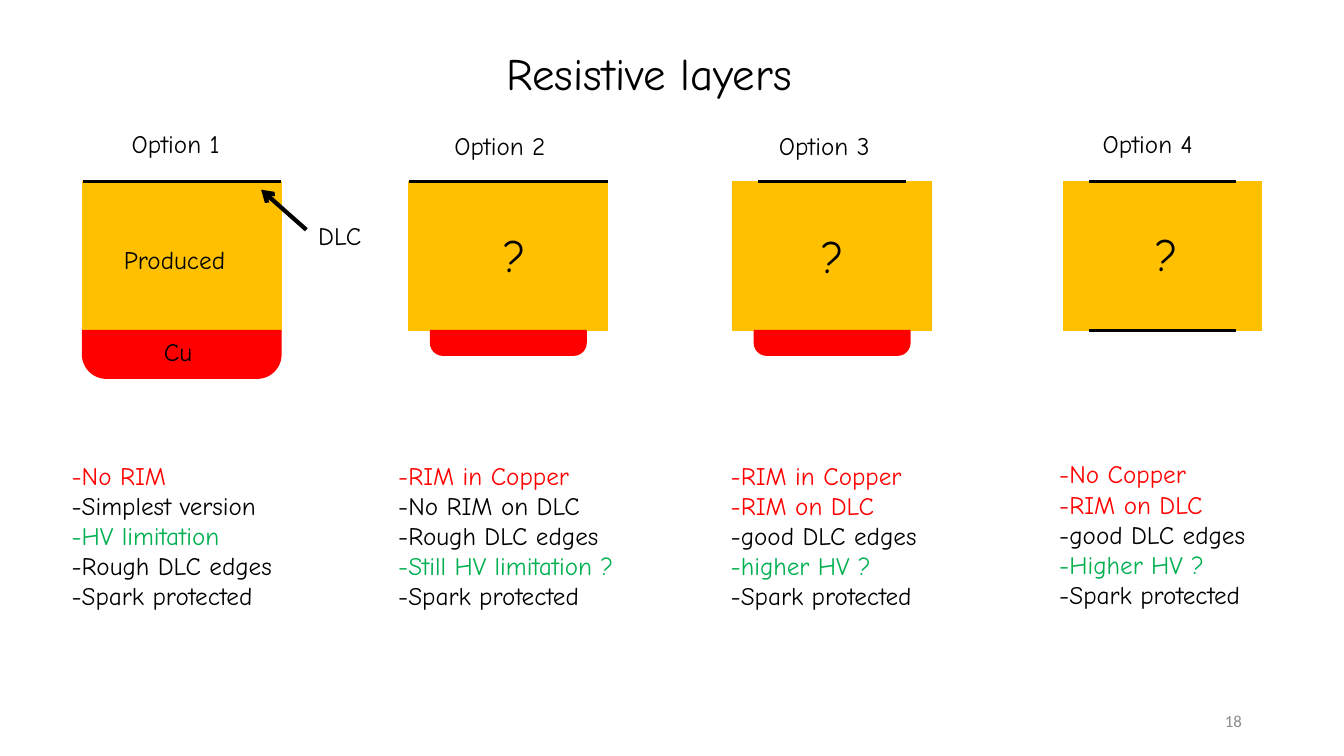
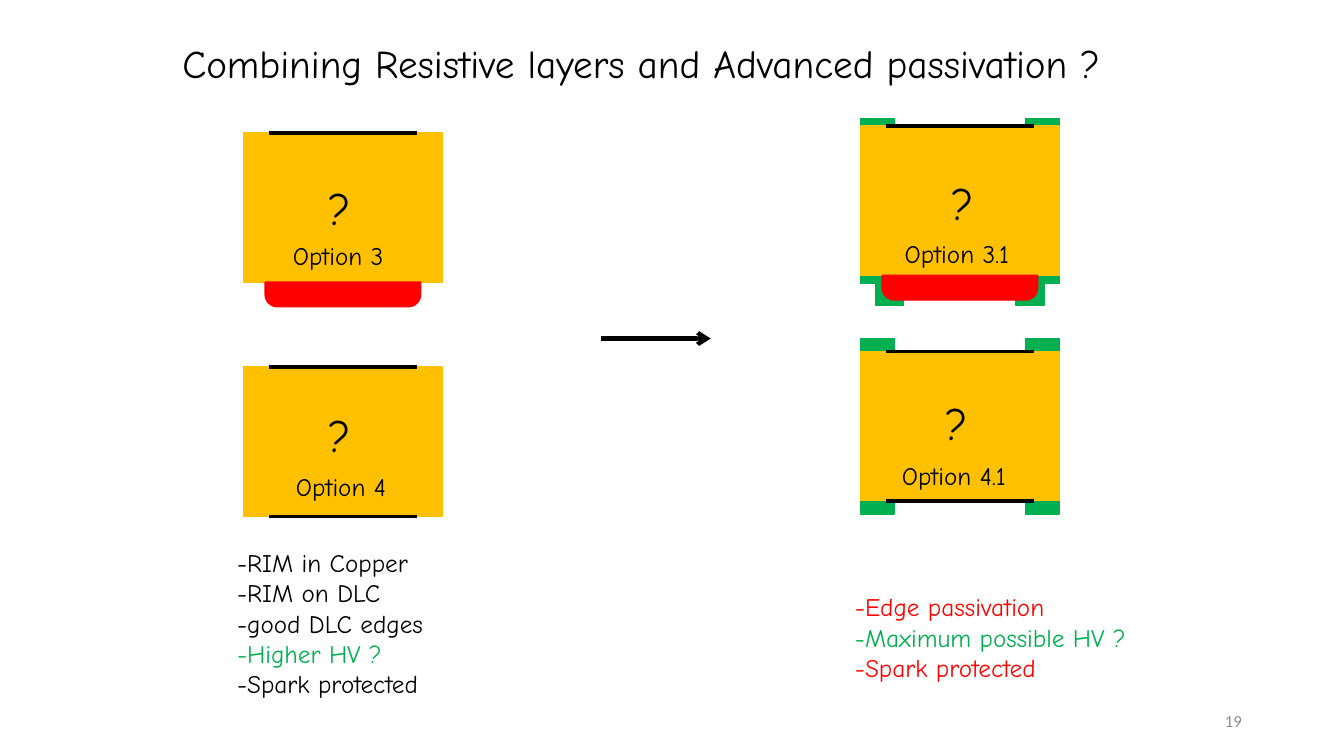
from dataclasses import dataclass

from lxml.etree import SubElement
from pptx import Presentation
from pptx.dml.color import RGBColor
from pptx.enum.shapes import MSO_CONNECTOR, MSO_SHAPE
from pptx.enum.text import MSO_ANCHOR, MSO_AUTO_SIZE, PP_ALIGN
from pptx.oxml.ns import qn
from pptx.util import Cm, Pt


@dataclass(frozen=True)
class Theme:
    black: str = "000000"
    red: str = "FF0000"
    green: str = "00B050"
    amber: str = "FFC000"
    grey: str = "8C8C8C"
    font: str = "Comic Neue"
    number_font: str = "Calibri"
    text_size: int = 18
    mark_size: int = 32
    number_size: int = 12
    layer_width: float = 2.5
    arrow_width: float = 3


THEME = Theme()
BLACK, RED, GREEN = THEME.black, THEME.red, THEME.green

# Geometry in centimetres
BLOCK_WIDTH, BLOCK_HEIGHT = 5.0, 3.76
LAYER_INSETS = {"full": 0, "short": 0.64}
COPPER_PADS = {"full": (0, 1.2), "rim": (0.54, 0.62)}  # inset, height
LEFT_PASSIVATION = {  # left-hand pieces: x, y, width, height
    "wrapped": [(0, -0.2, 0.84, 0.2), (0, 3.76, 0.56, 0.2),
                (0.38, 3.96, 0.18, 0.2), (0.38, 4.11, 0.7, 0.41)],
    "corners": [(0, -0.33, 0.84, 0.43), (0, 3.66, 0.84, 0.43)],
}

# Content: block labels are placed relative to their block
SLIDES = [
    {
        "number": "18", "layout": 4,
        "title": ("Resistive layers", 32, 12.5, 1.02, 8.9),
        "lists": [
            (1.55, 11.46, [("-No RIM", RED), ("-Simplest version", BLACK),
                           ("-HV limitation", GREEN), ("-Rough DLC edges", BLACK),
                           ("-Spark protected", BLACK)]),
            (9.78, 11.46, [("-RIM in Copper", RED), ("-No RIM on DLC", BLACK),
                           ("-Rough DLC edges", BLACK), ("-Still HV limitation ?", GREEN),
                           ("-Spark protected", BLACK)]),
            (18.16, 11.46, [("-RIM in Copper", RED), ("-RIM on DLC", RED),
                            ("-good DLC edges", BLACK), ("-higher HV ?", GREEN),
                            ("-Spark protected", BLACK)]),
            (26.44, 11.43, [("-No Copper", RED), ("-RIM on DLC", RED),
                            ("-good DLC edges", BLACK), ("-Higher HV ?", GREEN),
                            ("-Spark protected", BLACK)]),
        ],
        "blocks": [
            {"at": (2.08, 4.57), "top": "full", "copper": "full",
             "labels": [("Option 1", 0.99, -1.45), ("Produced", 0.79, 1.47),
                        ("Cu", 1.8, 3.78), ("DLC", 5.69, 0.86)]},
            {"at": (10.31, 4.57), "top": "full", "copper": "rim",
             "labels": [("Option 2", 0.89, -1.4), ("?", 2.13, 1.04)]},
            {"at": (18.47, 4.57), "top": "short", "copper": "rim",
             "labels": [("Option 3", 0.91, -1.4), ("?", 1.98, 1.07)]},
            {"at": (26.8, 4.57), "top": "short", "bottom": "short",
             "labels": [("Option 4", 0.74, -1.45), ("?", 2.08, 1.02)]},
        ],
        "arrow": (7.72, 5.79, 6.58, 4.78),
    },
    {
        "number": "19", "layout": 3,
        "title": ("Combining Resistive layers and Advanced passivation ?",
                  28, 4.34, 0.86, 25.7),
        "lists": [
            (5.72, 13.67, [("-RIM in Copper", BLACK), ("-RIM on DLC", BLACK),
                           ("-good DLC edges", BLACK), ("-Higher HV ?", GREEN),
                           ("-Spark protected", BLACK)]),
            (21.29, 14.78, [("-Edge passivation", RED), ("-Maximum possible HV ?", GREEN),
                            ("-Spark protected", RED)]),
        ],
        "blocks": [
            {"at": (6.14, 3.35), "top": "short", "copper": "rim",
             "labels": [("Option 3", 0.99, 2.57), ("?", 1.88, 1.07)]},
            {"at": (6.14, 9.25), "top": "short", "bottom": "short",
             "labels": [("Option 4", 1.07, 2.51), ("?", 1.9, 0.91)]},
            {"at": (21.69, 3.18), "top": "short", "copper": "rim",
             "passivation": "wrapped",
             "labels": [("Option 3.1", 0.86, 2.69), ("?", 2.03, 1.12)]},
            {"at": (21.69, 8.86), "top": "short", "bottom": "short",
             "passivation": "corners",
             "labels": [("Option 4.1", 0.79, 2.62), ("?", 1.88, 0.99)]},
        ],
        "arrow": (15.14, 8.53, 17.91, 8.53),
    },
]


# Text helpers
def place(box, left, top, width, height):
    box.left, box.top, box.width, box.height = map(Cm, (left, top, width, height))


def write(box, lines, size, font=THEME.font, align=PP_ALIGN.LEFT, anchor=MSO_ANCHOR.TOP):
    """Fill a box with (text, colour) lines, without bullets or gaps."""
    frame = box.text_frame
    frame.text = "\n".join(text for text, _ in lines)
    frame.word_wrap = True
    frame.auto_size = MSO_AUTO_SIZE.NONE
    frame.vertical_anchor = anchor
    for para, (_, colour) in zip(frame.paragraphs, lines):
        properties = para._p.get_or_add_pPr()
        properties.set("marL", "0")
        properties.set("indent", "0")
        SubElement(properties, qn("a:buNone"))
        para.alignment = align
        para.space_before = Pt(0)
        para.line_spacing = 1.0
        for span in para.runs:
            span.font.name = font
            span.font.size = Pt(size)
            span.font.bold = False
            span.font.color.rgb = RGBColor.from_string(colour)


def add_text(page, text, left, top, width, height, size, colour=BLACK, **style):
    box = page.shapes.add_textbox(Cm(left), Cm(top), Cm(width), Cm(height))
    write(box, [(text, colour)], size, **style)


def add_label(page, text, left, top):
    size = THEME.mark_size if text == "?" else THEME.text_size
    width, height = 0.8 + 0.018 * size * len(text), 0.23 + 0.044 * size
    add_text(page, text, left, top, width, height, size)


# Drawing helpers
def add_solid(page, preset, left, top, width, height, colour):
    shape = page.shapes.add_shape(preset, Cm(left), Cm(top), Cm(width), Cm(height))
    shape.shadow.inherit = False
    shape.fill.solid()
    shape.fill.fore_color.rgb = RGBColor.from_string(colour)
    shape.line.color.rgb = RGBColor.from_string(colour)
    shape.line.width = Pt(1)
    return shape


def add_line(page, start_x, start_y, end_x, end_y, width, arrow=False):
    line = page.shapes.add_connector(
        MSO_CONNECTOR.STRAIGHT, Cm(start_x), Cm(start_y), Cm(end_x), Cm(end_y))
    line.line.color.rgb = RGBColor.from_string(BLACK)
    line.line.width = Pt(width)
    if arrow:
        SubElement(line.line._get_or_add_ln(), qn("a:tailEnd"), type="arrow")
    SubElement(line._element.spPr, qn("a:effectLst"))


def add_block(page, block):
    left, top = block["at"]
    bottom = top + BLOCK_HEIGHT

    # Passivation, mirrored about the middle of the block
    for x, y, width, height in LEFT_PASSIVATION.get(block.get("passivation"), []):
        for offset in (x, BLOCK_WIDTH - x - width):
            add_solid(page, MSO_SHAPE.RECTANGLE, left + offset, top + y,
                      width, height, GREEN)

    add_solid(page, MSO_SHAPE.RECTANGLE, left, top, BLOCK_WIDTH, BLOCK_HEIGHT, THEME.amber)

    # Copper with rounded lower corners
    if "copper" in block:
        inset, height = COPPER_PADS[block["copper"]]
        copper = add_solid(page, MSO_SHAPE.ROUND_2_SAME_RECTANGLE, left + inset, bottom,
                           BLOCK_WIDTH - 2 * inset, height, RED)
        copper.adjustments[0] = 0.5
        copper.rotation = 180

    # Resistive layers
    for side, y in (("top", top), ("bottom", bottom)):
        if side in block:
            inset = LAYER_INSETS[block[side]]
            add_line(page, left + inset, y, left + BLOCK_WIDTH - inset, y,
                     THEME.layer_width)


def build_slide(deck, content):
    page = deck.slides.add_slide(deck.slide_layouts[content["layout"]])

    # Title and lists
    text, size, left, top, width = content["title"]
    place(page.shapes.title, left, top, width, 0.23 + 0.044 * size)
    write(page.shapes.title, [(text, BLACK)], size)
    bodies = list(page.placeholders)[1:]
    for body, (left, top, lines) in zip(bodies, content["lists"]):
        place(body, left, top, 7.4, 0.25 + 0.77 * len(lines))
        write(body, lines, THEME.text_size)

    # Layer diagrams
    for block in content["blocks"]:
        add_block(page, block)
    for block in content["blocks"]:
        left, top = block["at"]
        for text, x, y in block["labels"]:
            add_label(page, text, left + x, top + y)
    add_line(page, *content["arrow"], THEME.arrow_width, arrow=True)

    # Slide number
    add_text(page, content["number"], 23.93, 17.65, 7.62, 1.01, THEME.number_size,
             THEME.grey, font=THEME.number_font, align=PP_ALIGN.RIGHT,
             anchor=MSO_ANCHOR.MIDDLE)


def main():
    deck = Presentation()
    deck.slide_width, deck.slide_height = Cm(33.87), Cm(19.05)
    for content in SLIDES:
        build_slide(deck, content)
    deck.save("out.pptx")


if __name__ == "__main__":
    main()
